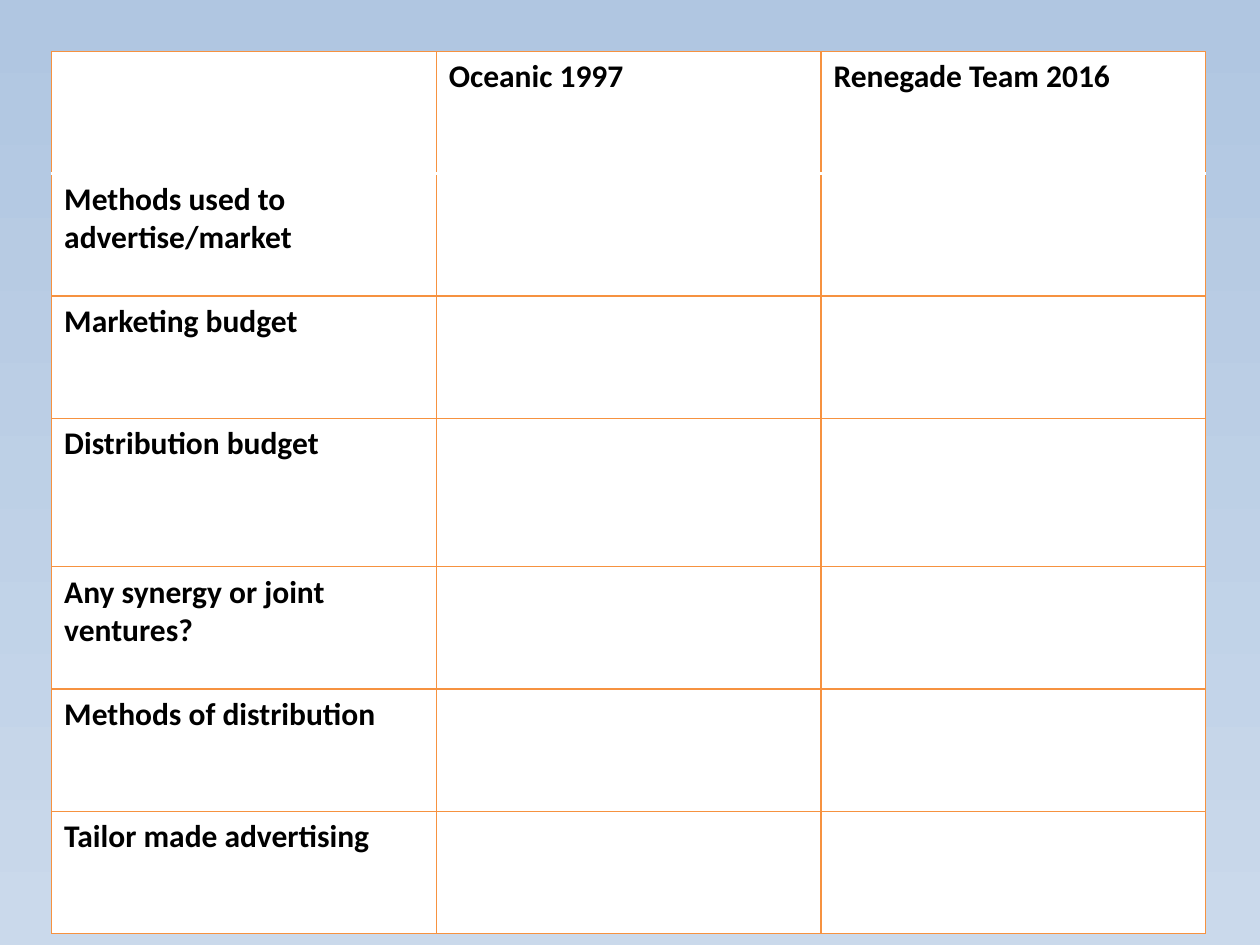
"""Build a slide comparing the marketing of two films in a table."""
import pptx
import pptx.util
import pptx.dml.color
import pptx.oxml
import pptx.oxml.ns

Inches, Pt = pptx.util.Inches, pptx.util.Pt


def color(code):
    return pptx.dml.color.RGBColor.from_string(code)


def border(cell, side, code, width):
    cell._tc.get_or_add_tcPr().append(pptx.oxml.parse_xml(
        f'<a:ln{side} {pptx.oxml.ns.nsdecls("a")} w="{Pt(width)}">'
        f'<a:solidFill><a:srgbClr val="{code}"/></a:solidFill></a:ln{side}>'))


deck = pptx.Presentation()
deck.slide_width, deck.slide_height = Inches(10), Inches(7.5)
slide = deck.slides.add_slide(deck.slide_layouts[6])

back = slide.background.fill
back.gradient()
back.gradient_angle = 270
for stop, code in zip(back.gradient_stops, ("B0C6E1", "CAD9EB")):
    stop.color.rgb = color(code)

films = ["", "Oceanic 1997", "Renegade Team 2016"]
topics = ["Methods used to advertise/market", "Marketing budget",
          "Distribution budget", "Any synergy or joint ventures?",
          "Methods of distribution", "Tailor made advertising"]
rows = [films] + [[topic, "", ""] for topic in topics]
highs = [0.97, 0.97, 0.97, 1.18, 0.97, 0.97, 0.97]

table = slide.shapes.add_table(
    len(rows), len(films), Inches(0.41), Inches(0.41),
    Inches(9.16), Inches(sum(highs))).table
for col in table.columns:
    col.width = Inches(9.16 / len(films))

for y, (texts, high) in enumerate(zip(rows, highs)):
    table.rows[y].height = Inches(high)
    for x, text in enumerate(texts):
        cell = table.cell(y, x)
        for side in "LRTB":
            if (y, side) in ((0, "B"), (1, "T")):
                border(cell, side, "FFFFFF", 2)
            else:
                border(cell, side, "F69240", 0.75)
        cell.fill.solid()
        cell.fill.fore_color.rgb = color("FFFFFF")
        if text:
            cell.text_frame.text = text
            font = cell.text_frame.paragraphs[0].runs[0].font
            font.name, font.size, font.bold = "Calibri", Pt(18), True
            font.color.rgb = color("000000")

deck.save("out.pptx")
